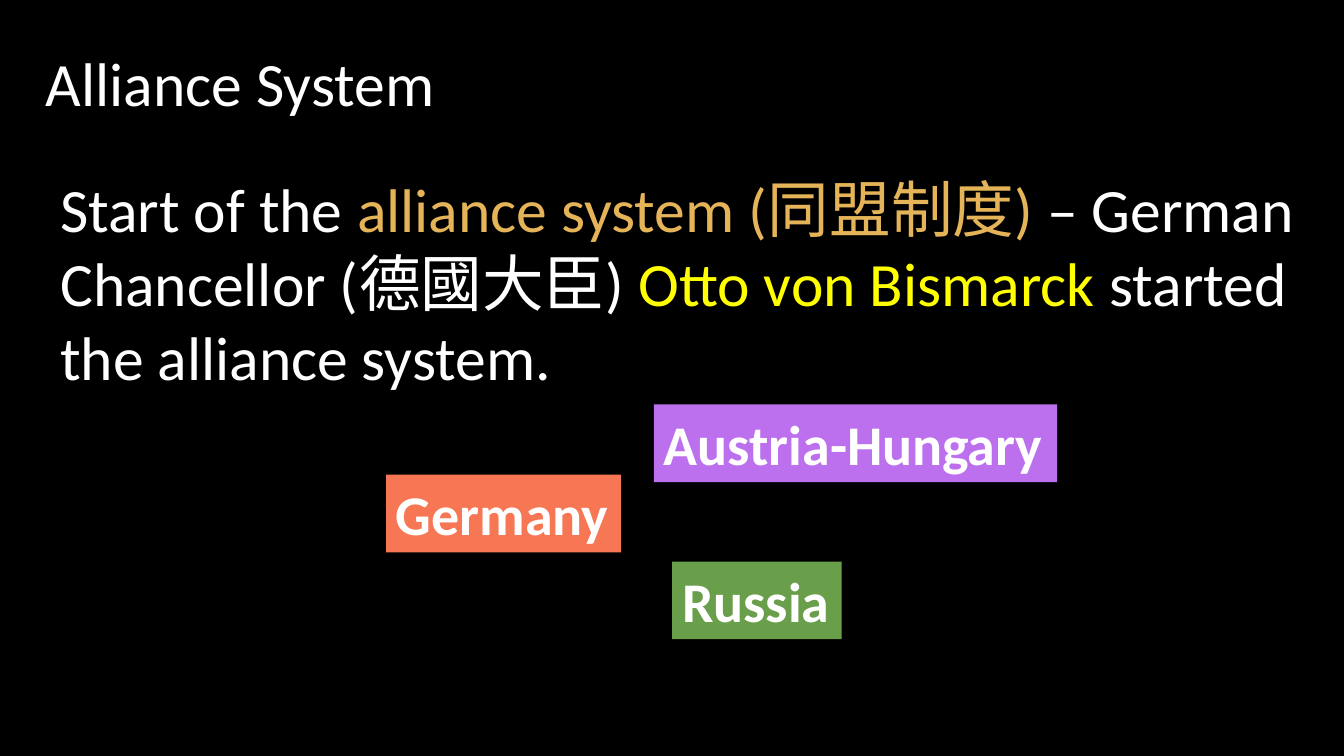
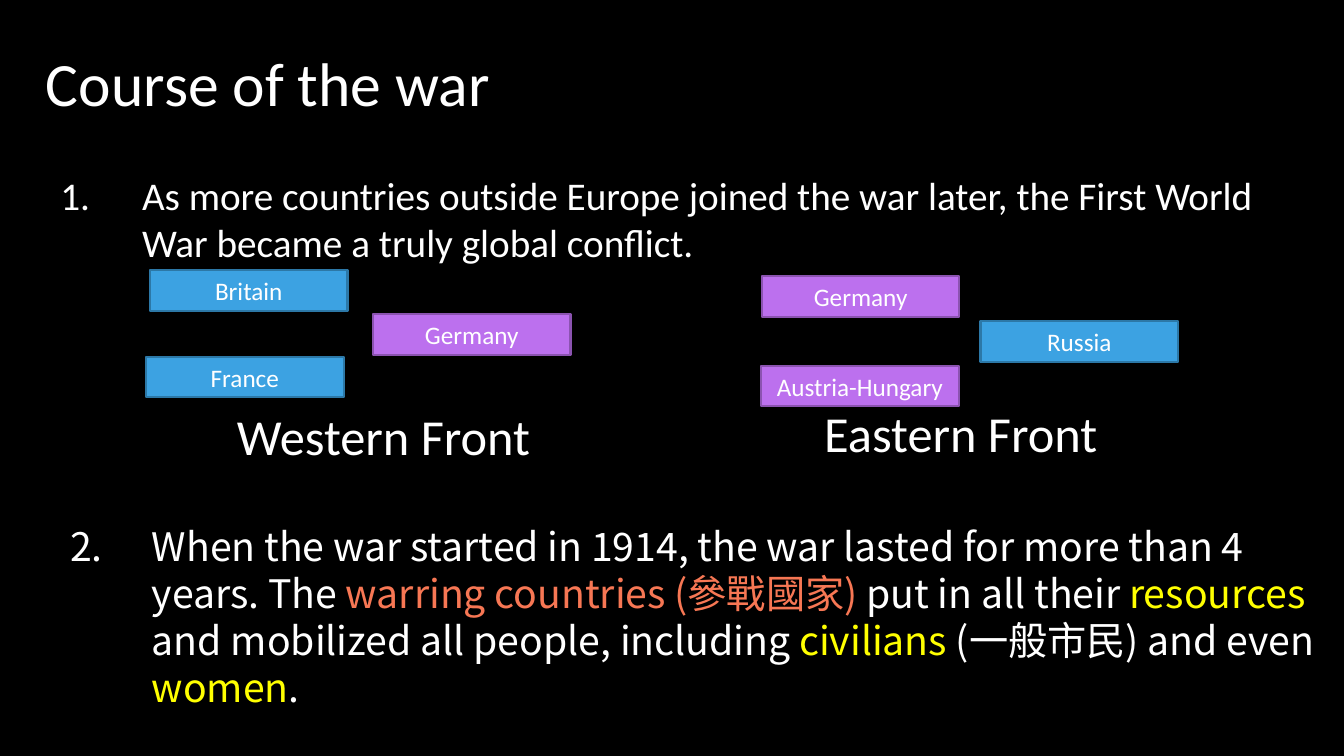
from dataclasses import dataclass
from typing import NamedTuple, Optional

from lxml import etree
from pptx import Presentation, util as u
from pptx.dml.color import RGBColor
from pptx.enum import shapes, text
from pptx.oxml import ns


@dataclass(frozen=True)
class Theme:
    black: str = "000000"
    white: str = "FFFFFF"
    gold: str = "E5B458"
    yellow: str = "FFFF00"
    orange: str = "F77754"
    purple: str = "BC70EE"
    purple_edge: str = "8B53B0"
    green: str = "699E4A"
    blue: str = "3CA2E2"
    blue_edge: str = "2C78A7"
    latin: str = "Calibri"
    chinese: str = "Noto Sans CJK SC"
    title_size: int = 44
    tag_size: int = 40
    front_size: int = 36
    list_size: int = 28
    country_size: int = 18
    edge_width: float = 1.5


THEME = Theme()


class Box(NamedTuple):
    left: float
    top: float
    width: float
    height: float


class Span(NamedTuple):
    words: str
    color: str = THEME.white


@dataclass(frozen=True)
class TextStyle:
    size: int
    font: str = THEME.latin
    bold: bool = False
    centered: bool = False
    wrap: bool = True
    number: Optional[int] = None


@dataclass(frozen=True)
class Paint:
    fill: str
    edge: Optional[str] = None


class Label(NamedTuple):
    words: str
    box: Box
    paint: Optional[Paint] = None


TITLE = TextStyle(THEME.title_size, wrap=False)
BODY = TextStyle(THEME.title_size)
TAG = TextStyle(THEME.tag_size, bold=True, wrap=False)
FRONT = TextStyle(THEME.front_size, wrap=False)
COUNTRY = TextStyle(THEME.country_size, centered=True)

ALLIES = Paint(THEME.blue, THEME.blue_edge)
CENTRAL_POWERS = Paint(THEME.purple, THEME.purple_edge)

BODY_LEFT, BODY_TOP, BODY_WIDTH = 1.27, 4.19, 31.93
NUMBER_INDENT = u.Cm(2.06)

ALLIANCE_TAGS = [
    Label("Germany", Box(9.73, 11.96, 5.92, 1.96), Paint(THEME.orange)),
    Label("Austria-Hungary", Box(16.48, 10.19, 10.16, 1.96), Paint(THEME.purple)),
    Label("Russia", Box(16.94, 14.15, 4.27, 1.96), Paint(THEME.green)),
]


def country(words: str, left: float, top: float, side: Paint) -> Label:
    return Label(words, Box(left, top, 4.98, 1.02), side)


COUNTRIES = [
    country("Germany", 9.4, 7.92, CENTRAL_POWERS),
    country("Austria-Hungary", 19.18, 9.22, CENTRAL_POWERS),
    country("Britain", 3.78, 6.81, ALLIES),
    country("France", 3.68, 8.99, ALLIES),
    country("Russia", 24.71, 8.1, ALLIES),
    country("Germany", 19.2, 6.96, CENTRAL_POWERS),
]

FRONTS = [
    Label("Western Front", Box(5.72, 10.08, 7.98, 1.8)),
    Label("Eastern Front", Box(20.52, 10.01, 7.47, 1.8)),
]


def rgb(color: str) -> RGBColor:
    return RGBColor.from_string(color)


def number_paragraph(paragraph, start: int) -> None:
    properties = paragraph._p.get_or_add_pPr()
    properties.set("marL", str(NUMBER_INDENT))
    properties.set("indent", str(-NUMBER_INDENT))
    bullet = etree.SubElement(properties, ns.qn("a:buAutoNum"))
    bullet.set("type", "arabicPeriod")
    bullet.set("startAt", str(start))


def style_paragraph(paragraph, style: TextStyle) -> None:
    paragraph.alignment = text.PP_ALIGN.CENTER if style.centered else text.PP_ALIGN.LEFT
    if style.number is not None:
        number_paragraph(paragraph, style.number)
    font = paragraph.font
    font.size = u.Pt(style.size)
    font.bold = style.bold
    font.color.rgb = rgb(THEME.white)
    font.name = style.font
    defaults = paragraph._p.pPr.find(ns.qn("a:defRPr"))
    etree.SubElement(defaults, ns.qn("a:ea")).set("typeface", THEME.chinese)


def add_block(slide, box: Box, spans: list[Span], style: TextStyle,
              paint: Optional[Paint] = None) -> None:
    place = [u.Cm(length) for length in box]
    if paint is None:
        shape = slide.shapes.add_textbox(*place)
    else:
        shape = slide.shapes.add_shape(shapes.MSO_SHAPE.RECTANGLE, *place)
        shape.shadow.inherit = False
        shape.fill.solid()
        shape.fill.fore_color.rgb = rgb(paint.fill)
        if paint.edge is None:
            shape.line.fill.background()
        else:
            shape.line.color.rgb = rgb(paint.edge)
            shape.line.width = u.Pt(THEME.edge_width)
    frame = shape.text_frame
    frame.word_wrap = style.wrap
    frame.auto_size = text.MSO_AUTO_SIZE.SHAPE_TO_FIT_TEXT
    paragraph = frame.paragraphs[0]
    style_paragraph(paragraph, style)
    for span in spans:
        run = paragraph.add_run()
        run.text = span.words
        if span.color != THEME.white:
            run.font.color.rgb = rgb(span.color)


def add_labels(slide, labels: list[Label], style: TextStyle) -> None:
    for label in labels:
        add_block(slide, label.box, [Span(label.words)], style, label.paint)


def add_titled_slide(presentation, title: str, width: float):
    slide = presentation.slides.add_slide(presentation.slide_layouts[6])
    add_block(slide, Box(0.91, 0.99, width, 2.13), [Span(title)], TITLE,
              Paint(THEME.black, THEME.black))
    return slide


def add_alliance_slide(presentation) -> None:
    slide = add_titled_slide(presentation, "Alliance System", 10.41)
    add_block(slide, Box(BODY_LEFT, BODY_TOP, BODY_WIDTH, 5.89), [
        Span("Start of the "),
        Span("alliance system (同盟制度) ", THEME.gold),
        Span("– German Chancellor (德國大臣) "),
        Span("Otto von Bismarck ", THEME.yellow),
        Span("started the alliance system."),
    ], BODY)
    add_labels(slide, ALLIANCE_TAGS, TAG)


def add_war_slide(presentation) -> None:
    slide = add_titled_slide(presentation, "Course of the war", 11.81)
    add_block(slide, Box(BODY_LEFT, BODY_TOP, BODY_WIDTH, 2.64), [
        Span("As more countries outside Europe joined the war later, "
             "the First World War became a truly global conflict."),
    ], TextStyle(THEME.list_size, number=1))
    add_labels(slide, COUNTRIES, COUNTRY)
    add_labels(slide, FRONTS, FRONT)
    add_block(slide, Box(1.52, 13.03, BODY_WIDTH, 5.05), [
        Span("When the war started in 1914, the war lasted for more than 4 years. The "),
        Span("warring countries (參戰國家) ", THEME.orange),
        Span("put in all their "),
        Span("resources", THEME.yellow),
        Span(" and mobilized all people, including "),
        Span("civilians", THEME.yellow),
        Span(" (一般市民) and even "),
        Span("women", THEME.yellow),
        Span("."),
    ], TextStyle(THEME.list_size, font=THEME.chinese, number=2))


def main() -> None:
    presentation = Presentation()
    presentation.slide_width = u.Cm(33.87)
    presentation.slide_height = u.Cm(19.05)
    background = presentation.slide_master.background.fill
    background.solid()
    background.fore_color.rgb = rgb(THEME.black)
    add_alliance_slide(presentation)
    add_war_slide(presentation)
    presentation.save("out.pptx")


if __name__ == "__main__":
    main()
